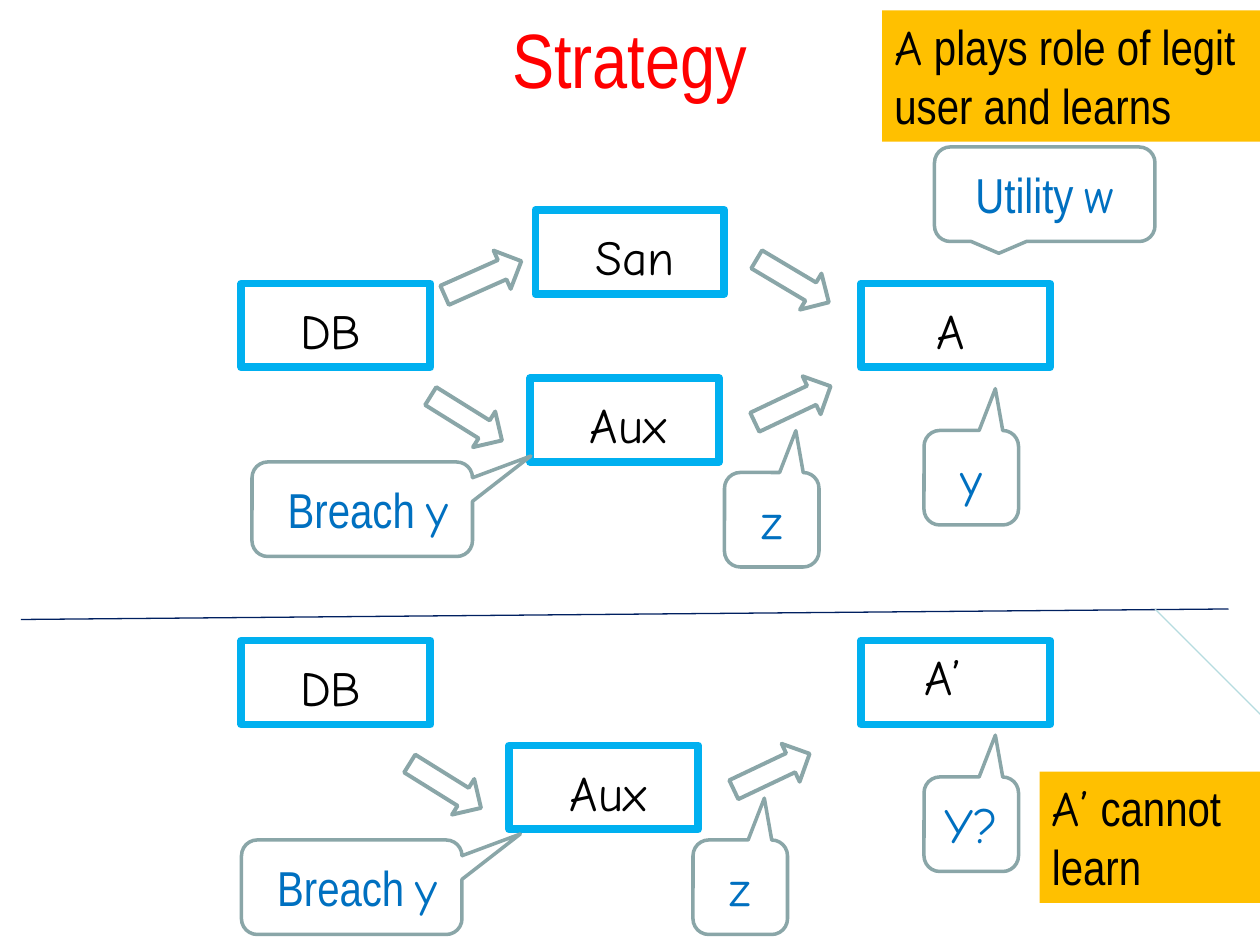
"""Build the Strategy slide: sanitizer versus auxiliary-information diagrams."""
from dataclasses import dataclass

from pptx import Presentation
from pptx.dml.color import RGBColor
from pptx.enum.shapes import MSO_CONNECTOR, MSO_SHAPE
from pptx.enum.text import MSO_ANCHOR, PP_ALIGN
from pptx.oxml.ns import qn
from pptx.util import Pt

RED = RGBColor(0xFF, 0x00, 0x00)
BLACK = RGBColor(0x00, 0x00, 0x00)
BLUE = RGBColor(0x00, 0x70, 0xC0)
SKY = RGBColor(0x00, 0xB0, 0xF0)
GREY = RGBColor(0x8A, 0xA6, 0xA8)
AMBER = RGBColor(0xFF, 0xC0, 0x00)
NAVY = RGBColor(0x00, 0x20, 0x60)
PALE = RGBColor(0xB6, 0xDC, 0xDF)

NARROW = "Arial Narrow"
COMIC = "Comic Neue"
NODE_W, NODE_H = 108, 48
ARROW_W, ARROW_H = 48, 24
LABEL_H = 41
WIDE, SQUARE, CALLOUT_H = 126, 54, 54
NOTE_W, NOTE_H = 234, 75
TAIL_DOWN = (-0.208, 0.625)
TAIL_RIGHT = (0.765, -0.564)
TAIL_UP = (0.255, -0.943)


@dataclass
class Node:
    text: str
    x: float
    y: float
    label_dx: float
    label_w: float
    label_dy: float = 6


@dataclass
class Arrow:
    x: float
    y: float
    angle: float


@dataclass
class Callout:
    runs: list
    x: float
    y: float
    w: float
    tail: tuple


@dataclass
class Note:
    paragraphs: list
    x: float
    y: float


@dataclass
class Rule:
    start: tuple
    end: tuple
    color: RGBColor


BREACH = [(" Breach ", NARROW), ("y", COMIC)]

NODES = [
    Node("DB", 138, 162, 24, 54),
    Node("San", 306, 120, 25, 63.5),
    Node("A", 492, 162, 34, 35),
    Node("Aux", 303, 216, 23, 66),
    Node("DB", 138, 366, 24, 54),
    Node("A’", 492, 366, 27, 40, 0),
    Node("Aux", 291, 426, 23.5, 66),
]
ARROWS = [
    Arrow(252, 147, 336),
    Arrow(429, 148.5, 30.8),
    Arrow(242.5, 227, 31.9),
    Arrow(429, 219, 334.6),
    Arrow(230.5, 437, 31.9),
    Arrow(417, 429, 334.6),
]
CALLOUTS = [
    Callout([("Utility ", NARROW), ("w", COMIC)], 534, 84, WIDE, TAIL_DOWN),
    Callout(BREACH, 144, 264, WIDE, TAIL_RIGHT),
    Callout(BREACH, 138, 480, WIDE, TAIL_RIGHT),
    Callout([("y", COMIC)], 528, 246, SQUARE, TAIL_UP),
    Callout([("Y?", COMIC)], 528, 444, SQUARE, TAIL_UP),
    Callout([("z", COMIC)], 414, 270, SQUARE, TAIL_UP),
    Callout([("z", COMIC)], 396, 480, SQUARE, TAIL_UP),
]
NOTES = [
    Note([[("A", COMIC), (" plays role of legit user and learns", NARROW)]], 504, 6),
    Note([[("A’", COMIC), (" cannot", NARROW)], [("learn", NARROW)]], 594, 441),
]
RULES = [
    Rule((12, 354), (702, 348), NAVY),
    Rule((660, 348), (732, 420), PALE),
]


def write(tf, paragraphs: list, *, size=28, color=BLACK, align=PP_ALIGN.CENTER,
          anchor=MSO_ANCHOR.MIDDLE, wrap=True) -> None:
    """Fill a text frame with paragraphs of (text, font) runs."""
    tf.word_wrap = wrap
    tf.vertical_anchor = anchor
    for i, runs in enumerate(paragraphs):
        p = tf.paragraphs[0] if i == 0 else tf.add_paragraph()
        p.alignment = align
        for text, font in runs:
            r = p.add_run()
            r.text = text
            r.font.name = font
            r.font.size = Pt(size)
            r.font.color.rgb = color


def add_text(s, x: float, y: float, w: float, h: float, runs: list, **fmt) -> None:
    """Add a text box holding one paragraph."""
    write(s.shapes.add_textbox(Pt(x), Pt(y), Pt(w), Pt(h)).text_frame, [runs], **fmt)


def add_outline(s, kind, x: float, y: float, w: float, h: float, color: RGBColor, width: float):
    """Add an unfilled preset shape with a coloured outline."""
    sp = s.shapes.add_shape(kind, Pt(x), Pt(y), Pt(w), Pt(h))
    sp.shadow.inherit = False
    sp.fill.background()
    sp.line.color.rgb = color
    sp.line.width = Pt(width)
    return sp


def draw_node(s, n: Node) -> None:
    """Draw a framed box and its label."""
    add_outline(s, MSO_SHAPE.RECTANGLE, n.x, n.y, NODE_W, NODE_H, SKY, 4.5)
    add_text(s, n.x + n.label_dx, n.y + n.label_dy, n.label_w, LABEL_H,
             [(n.text, COMIC)], anchor=MSO_ANCHOR.TOP, wrap=False)


def draw_arrow(s, a: Arrow) -> None:
    """Draw a rotated block arrow."""
    sp = add_outline(s, MSO_SHAPE.RIGHT_ARROW, a.x, a.y, ARROW_W, ARROW_H, GREY, 2.25)
    sp.rotation = a.angle


def draw_callout(s, c: Callout) -> None:
    """Draw a rounded speech callout with blue text."""
    sp = add_outline(s, MSO_SHAPE.ROUNDED_RECTANGULAR_CALLOUT, c.x, c.y, c.w, CALLOUT_H, GREY, 2)
    sp.adjustments[0], sp.adjustments[1] = c.tail
    write(sp.text_frame, [c.runs], color=BLUE)


def draw_note(s, n: Note) -> None:
    """Draw an amber note with left-aligned text."""
    sp = s.shapes.add_shape(MSO_SHAPE.RECTANGLE, Pt(n.x), Pt(n.y), Pt(NOTE_W), Pt(NOTE_H))
    sp.shadow.inherit = False
    sp.fill.solid()
    sp.fill.fore_color.rgb = AMBER
    sp.line.fill.background()
    write(sp.text_frame, n.paragraphs, align=PP_ALIGN.LEFT, anchor=MSO_ANCHOR.TOP)


def draw_rule(s, rule: Rule) -> None:
    """Draw a thin straight line."""
    (x1, y1), (x2, y2) = rule.start, rule.end
    line = s.shapes.add_connector(MSO_CONNECTOR.STRAIGHT, Pt(x1), Pt(y1), Pt(x2), Pt(y2))
    line.line.color.rgb = rule.color
    line.line.width = Pt(0.75)
    sp_pr = line._element.spPr
    sp_pr.append(sp_pr.makeelement(qn("a:effectLst"), {}))


def main() -> None:
    """Build and save the slide."""
    prs = Presentation()
    prs.slide_width, prs.slide_height = Pt(720), Pt(540)
    s = prs.slides.add_slide(prs.slide_layouts[6])
    add_text(s, 36, -12, 648, 90, [("Strategy", NARROW)], size=44, color=RED)
    for draw, items in ((draw_node, NODES), (draw_arrow, ARROWS), (draw_callout, CALLOUTS),
                        (draw_note, NOTES), (draw_rule, RULES)):
        for item in items:
            draw(s, item)
    prs.save("out.pptx")


if __name__ == "__main__":
    main()
